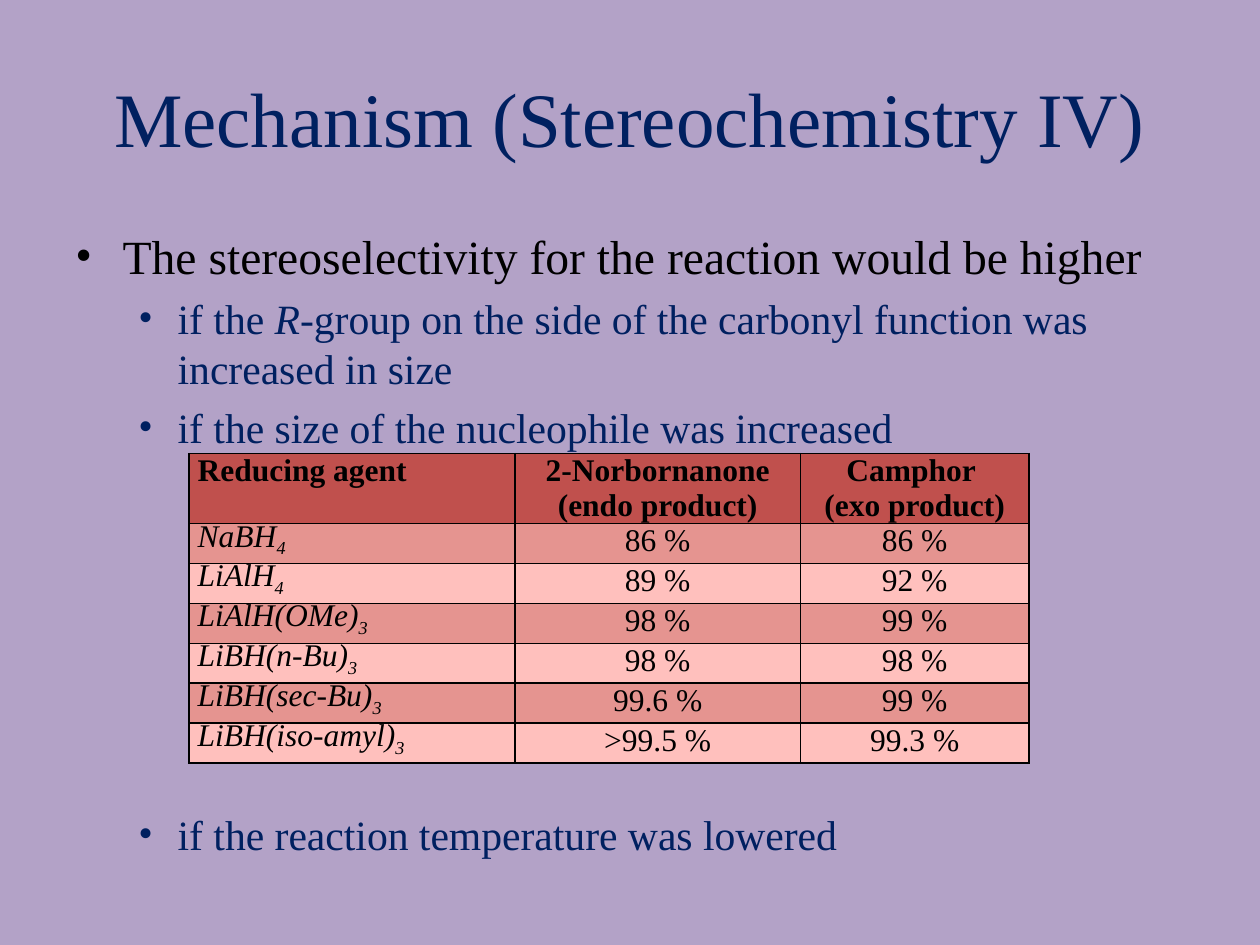
from dataclasses import dataclass

from lxml import etree
from pptx import Presentation
from pptx.dml.color import RGBColor
from pptx.enum import text
from pptx.oxml import ns
from pptx.util import Pt


@dataclass(frozen=True)
class Theme:
    """Colours and type sizes of the slide."""
    font: str = "Times New Roman"
    background: str = "B3A2C7"
    navy: str = "002060"
    black: str = "000000"
    header: str = "C0504D"
    band: str = "E59490"
    plain: str = "FFC0BD"
    title: float = 44
    lead: float = 27.2
    point: float = 23.8
    cell: float = 18


THEME = Theme()
POINTS = [
    (("The stereoselectivity for the reaction would be higher",), 0, 0),
    (("if the ", "R", "-group on the side of the carbonyl function was increased in size"), 1, 5),
    (("if the size of the nucleophile was increased",), 1, 5),
    (("if the reaction temperature was lowered",), 1, 204),
]
HEADINGS = ["Reducing agent", "2-Norbornanone (endo product)", "Camphor \v(exo product)"]
YIELDS = [
    ("NaBH", "4", "86 %", "86 %"),
    ("LiAlH", "4", "89 %", "92 %"),
    ("LiAlH(OMe)", "3", "98 %", "99 %"),
    ("LiBH(n-Bu)", "3", "98 %", "98 %"),
    ("LiBH(sec-Bu)", "3", "99.6 %", "99 %"),
    ("LiBH(iso-amyl)", "3", ">99.5 %", "99.3 %"),
]


def format_run(run, size, color, bold=False, italic=False):
    """Apply the theme font to a run."""
    font = run.font
    font.name, font.size, font.bold, font.italic = THEME.font, Pt(size), bold, italic
    font.color.rgb = RGBColor.from_string(color)


def add_text_frame(slide, box):
    """Add a wrapping text box and return its text frame."""
    frame = slide.shapes.add_textbox(*map(Pt, box)).text_frame
    frame.word_wrap = True
    return frame


def add_title(slide, box):
    """Place the centred title in the box."""
    frame = add_text_frame(slide, box)
    frame.text = "Mechanism (Stereochemistry IV)"
    frame.vertical_anchor = text.MSO_ANCHOR.MIDDLE
    paragraph = frame.paragraphs[0]
    paragraph.alignment = text.PP_ALIGN.CENTER
    format_run(paragraph.runs[0], THEME.title, THEME.navy)


def add_bullet(paragraph, margin, hanging):
    """Give a paragraph a hanging round bullet."""
    properties = paragraph._p.get_or_add_pPr()
    properties.set("marL", str(Pt(margin)))
    properties.set("indent", str(-Pt(hanging)))
    etree.SubElement(properties, ns.qn("a:buFont"), typeface=THEME.font)
    etree.SubElement(properties, ns.qn("a:buChar"), char="•")


def add_points(slide, box):
    """Place the bulleted statements in the box, leaving room for the table."""
    frame = add_text_frame(slide, box)
    styles = [(THEME.lead, THEME.black, 33, 27, 27), (THEME.point, THEME.navy, 28.5, 58.5, 22.5)]
    for index, (parts, level, gap) in enumerate(POINTS):
        paragraph = frame.add_paragraph() if index else frame.paragraphs[0]
        size, color, spacing, margin, hanging = styles[level]
        paragraph.level = level
        paragraph.line_spacing = Pt(spacing)
        paragraph.space_before = Pt(gap)
        add_bullet(paragraph, margin, hanging)
        for part in parts:
            run = paragraph.add_run()
            run.text = part
            format_run(run, size, color, italic=part == "R")


def style_cell(cell, fill):
    """Set borders, fill and margins of a table cell."""
    properties = cell._tc.get_or_add_tcPr()
    for side in ("lnL", "lnR", "lnT", "lnB"):
        line = etree.SubElement(properties, ns.qn(f"a:{side}"), w=str(Pt(1)))
        solid = etree.SubElement(line, ns.qn("a:solidFill"))
        etree.SubElement(solid, ns.qn("a:srgbClr"), val=THEME.black)
    cell.fill.solid()
    cell.fill.fore_color.rgb = RGBColor.from_string(fill)
    cell.margin_left = cell.margin_right = Pt(5)
    cell.margin_top = cell.margin_bottom = 0


def fill_cell(cell, content, column, bold=False, subscript=""):
    """Write a cell, with an optional subscript after its content."""
    paragraph = cell.text_frame.paragraphs[0]
    paragraph.text = content
    paragraph.alignment = text.PP_ALIGN.CENTER if column else text.PP_ALIGN.JUSTIFY
    paragraph.line_spacing = Pt(20)
    if subscript:
        run = paragraph.add_run()
        run.text = subscript
        run.font._element.set("baseline", "-25000")
    for run in paragraph.runs:
        format_run(run, THEME.cell, THEME.black, bold, italic=bool(subscript))


def add_yield_table(slide, box):
    """Place the table of reducing agents in the box."""
    left, top, width, height = box
    header_height = 40
    row_height = (height - header_height) / len(YIELDS)
    shape = slide.shapes.add_table(len(YIELDS) + 1, len(HEADINGS), *map(Pt, box))
    table = shape.table
    for column, share in zip(table.columns, (0.388, 0.34, 0.272)):
        column.width = Pt(width * share)
    for index, row in enumerate(table.rows):
        row.height = Pt(row_height if index else header_height)
        fill = (THEME.band if index % 2 else THEME.plain) if index else THEME.header
        for cell in row.cells:
            style_cell(cell, fill)
    for column, heading in enumerate(HEADINGS):
        fill_cell(table.cell(0, column), heading, column, bold=True)
    for index, (agent, count, *values) in enumerate(YIELDS, 1):
        fill_cell(table.cell(index, 0), agent, 0, subscript=count)
        for column, value in enumerate(values, 1):
            fill_cell(table.cell(index, column), value, column)


def main():
    """Build and save the slide."""
    presentation = Presentation()
    presentation.slide_width, presentation.slide_height = Pt(720), Pt(540)
    slide = presentation.slides.add_slide(presentation.slide_layouts[6])
    background = slide.background.fill
    background.solid()
    background.fore_color.rgb = RGBColor.from_string(THEME.background)
    add_title(slide, (36, 21.6, 648, 90))
    add_points(slide, (36, 126, 648, 356.4))
    add_yield_table(slide, (108, 259.2, 480, 176.8))
    presentation.save("out.pptx")


if __name__ == "__main__":
    main()
